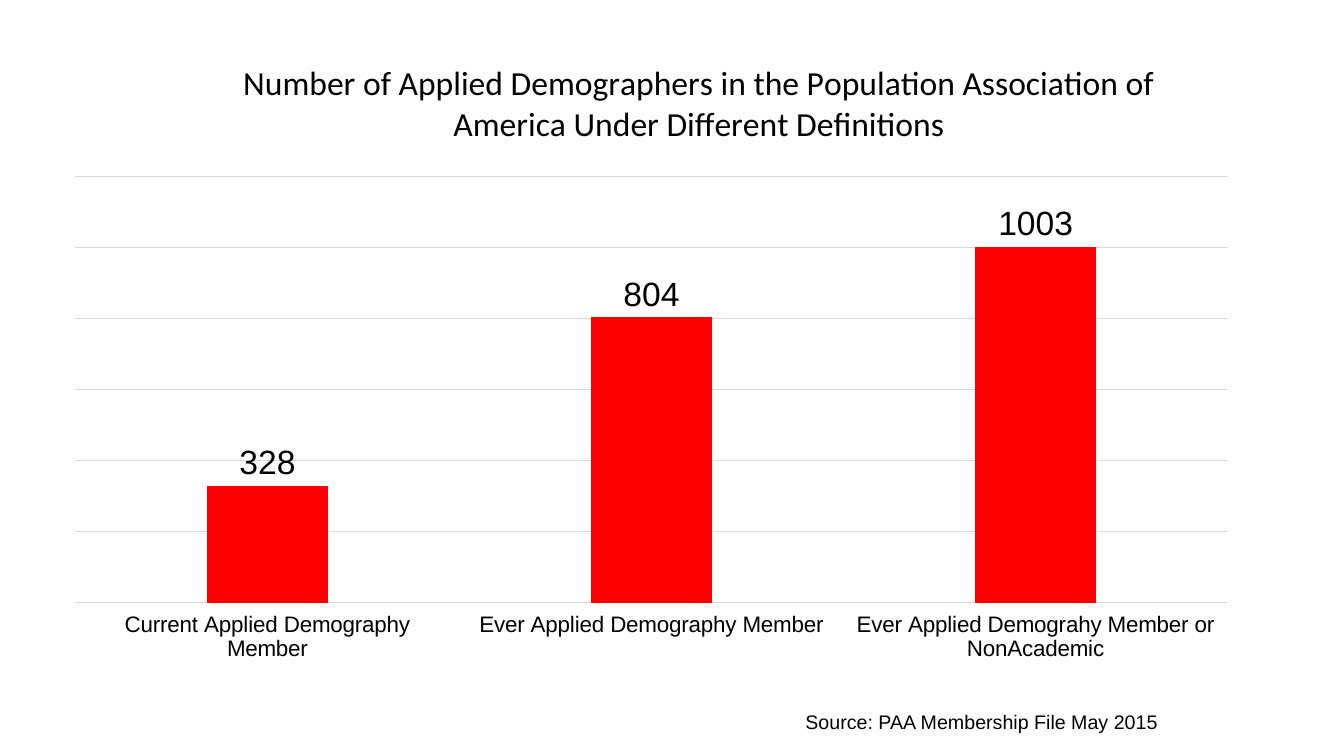
from dataclasses import dataclass

from pptx import Presentation
from pptx.chart.data import CategoryChartData
from pptx.dml.color import RGBColor
from pptx.enum.chart import XL_CHART_TYPE, XL_LABEL_POSITION, XL_TICK_LABEL_POSITION, XL_TICK_MARK
from pptx.enum.text import MSO_AUTO_SIZE
from pptx.oxml import parse_xml
from pptx.oxml.ns import nsdecls
from pptx.util import Inches, Pt

COLUMN = XL_CHART_TYPE.COLUMN_CLUSTERED
OUTSIDE = XL_LABEL_POSITION.OUTSIDE_END
LOW = XL_TICK_LABEL_POSITION.LOW
NO_TICK = XL_TICK_MARK.NONE
FIT_SHAPE = MSO_AUTO_SIZE.SHAPE_TO_FIT_TEXT


@dataclass(frozen=True)
class Theme:
    ink: RGBColor = RGBColor(0, 0, 0)
    bar: RGBColor = RGBColor(255, 0, 0)
    grid: RGBColor = RGBColor(0xD9, 0xD9, 0xD9)
    head_font: str = "Calibri"
    text_font: str = "Arial"
    base: int = 10
    large: int = 24
    label: int = 16
    note: int = 14


@dataclass(frozen=True)
class Group:
    name: str
    count: int


THEME = Theme()
TITLE = ("Number of Applied Demographers in the Population Association of "
         "America Under Different Definitions")
SOURCE = "Source: PAA Membership File May 2015"
GROUPS = [
    Group("Current Applied Demography Member", 328),
    Group("Ever Applied Demography Member", 804),
    Group("Ever Applied Demograhy Member or NonAcademic", 1003),
]


def style_font(font, size: int, face: str) -> None:
    font.size, font.name, font.bold = Pt(size), face, False
    font.color.rgb = THEME.ink


def style_line(line) -> None:
    line.color.rgb = THEME.grid
    line.width = Pt(0.75)


def set_layout(parent, index: int, target: str = "", **places: float) -> None:
    """Fix a chart part at fractions of the chart's width and height."""
    for old in parent.findall("{*}layout"):
        parent.remove(old)
    inner = f'<c:layoutTarget val="{target}"/>' if target else ""
    inner += "".join(f'<c:{key}Mode val="edge"/>' for key in ("x", "y"))
    inner += "".join(f'<c:{key} val="{value}"/>' for key, value in places.items())
    parent.insert(index, parse_xml(
        f'<c:layout {nsdecls("c")}><c:manualLayout>{inner}</c:manualLayout></c:layout>'))


def add_bars(slide) -> None:
    data = CategoryChartData()
    data.categories = [group.name for group in GROUPS]
    data.add_series("Series 1", [group.count for group in GROUPS])
    chart = slide.shapes.add_chart(
        COLUMN, Inches(0.57), Inches(0.21), Inches(11.88), Inches(6.58), data).chart
    style_font(chart.font, THEME.base, THEME.head_font)
    chart.has_legend = False

    title = chart.chart_title
    title.include_in_layout = False
    title.text_frame.text = TITLE
    style_font(title.text_frame.paragraphs[0].font, THEME.large, THEME.head_font)
    set_layout(title._element, 1, x=0.15, y=0.05)
    set_layout(chart._chartSpace.chart.plotArea, 0, "inner", x=0.015, y=0.235, w=0.962, h=0.642)

    names = chart.category_axis
    names.major_tick_mark = names.minor_tick_mark = NO_TICK
    names.tick_label_position = LOW
    style_font(names.tick_labels.font, THEME.label, THEME.text_font)
    style_line(names.format.line)

    scale = chart.value_axis
    scale.visible = False
    scale.minimum_scale, scale.maximum_scale, scale.major_unit = 0, 1200, 200
    style_line(scale.major_gridlines.format.line)

    plot = chart.plots[0]
    plot.gap_width, plot.overlap, plot.vary_by_categories = 219, -27, False
    bars = plot.series[0]
    bars.format.fill.solid()
    bars.format.fill.fore_color.rgb = THEME.bar
    labels = bars.data_labels
    labels.show_value, labels.position = True, OUTSIDE
    style_font(labels.font, THEME.large, THEME.text_font)


def add_source(slide) -> None:
    frame = slide.shapes.add_textbox(
        Inches(7.89), Inches(6.99), Inches(3.77), Inches(0.34)).text_frame
    frame.word_wrap = False
    frame.auto_size = FIT_SHAPE
    frame.text = SOURCE
    style_font(frame.paragraphs[0].font, THEME.note, THEME.text_font)


def main() -> None:
    deck = Presentation()
    deck.slide_width, deck.slide_height = Inches(13.33), Inches(7.5)
    slide = deck.slides.add_slide(deck.slide_layouts[6])
    add_bars(slide)
    add_source(slide)
    deck.save("out.pptx")


if __name__ == "__main__":
    main()
